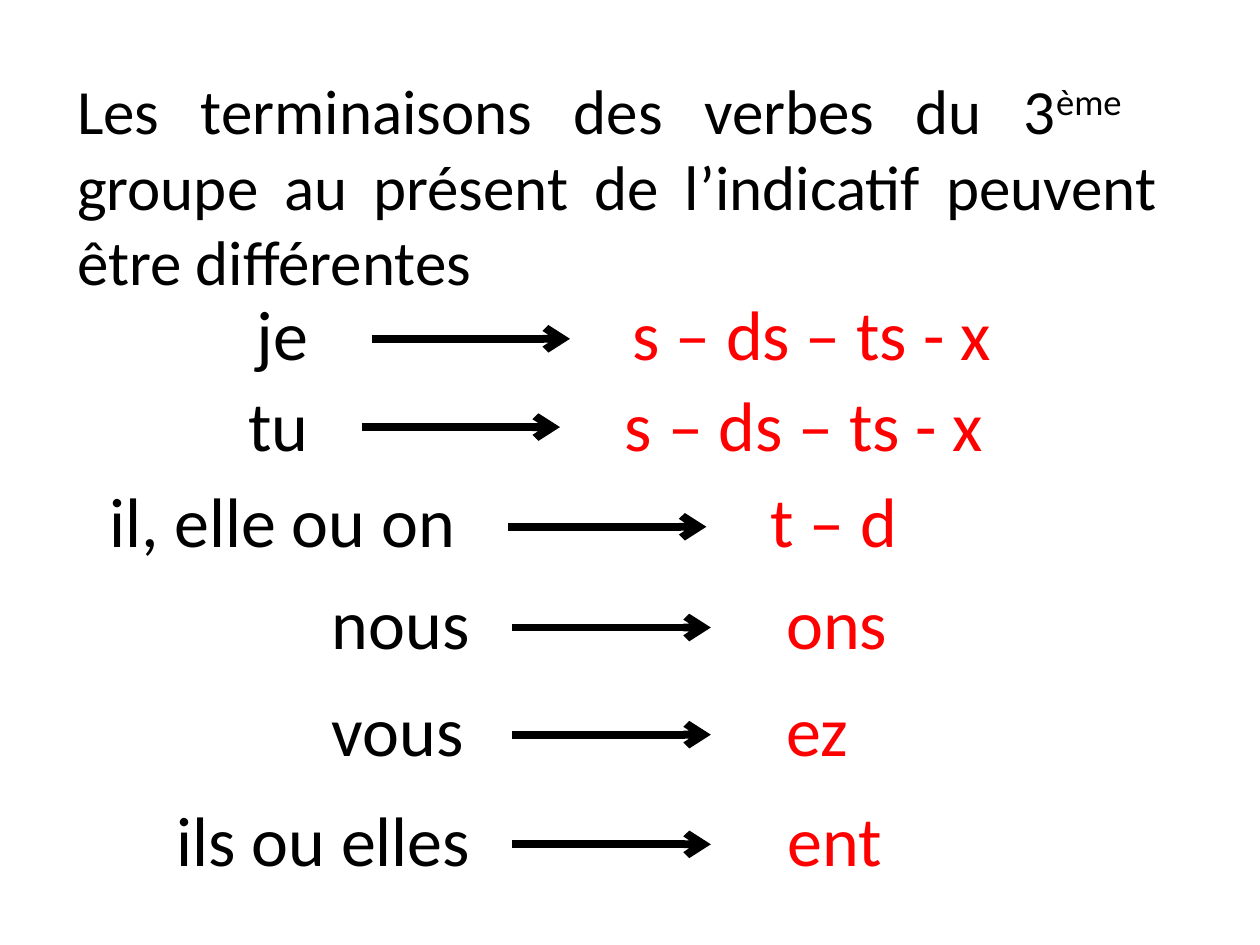
"""Build a slide on the endings of third-group French verbs in the present tense."""
from pptx import Presentation
from pptx import util as u
from pptx.dml.color import RGBColor
from pptx.enum import shapes, text
from pptx.oxml.ns import qn
from lxml import etree

FONT, BLACK, RED = "Calibri", "000000", "FF0000"
ROW_WIDTH, ROW_HEIGHT, ARROW_LENGTH = 19.41, 1.96, 4.0

RULE = [
    ("Les terminaisons des verbes du 3", None),
    ("ème  ", 30000),
    ("groupe au présent de l’indicatif peuvent être différentes", None),
]
# pronoun, ending, box left, box top, pronoun x, ending x, arrow x, arrow y
ROWS = [
    ("je", "s – ds – ts - x", 2.9, 5.73, 5.18, 12.75, 7.49, 6.83),
    ("tu", "s – ds – ts - x", 2.9, 7.57, 5.01, 12.6, 7.29, 8.61),
    ("il, elle ou on", "t – d", 0.64, 9.5, 2.2, 15.54, 10.24, 10.62),
    ("nous", "ons", 2.31, 11.56, 6.69, 15.85, 10.33, 12.65),
    ("vous", "ez", 2.31, 13.72, 6.69, 15.85, 10.33, 14.81),
    ("ils ou elles", "ent", 3.3, 15.93, 3.56, 15.88, 10.33, 17.02),
]


def colour(value):
    return RGBColor.from_string(value)


def add_span(para, words, size, value):
    span = para.add_run()
    span.text = words
    span.font.name, span.font.size = FONT, u.Pt(size)
    span.font.color.rgb = colour(value)
    return span


def add_rule(slide):
    body = slide.placeholders[1]
    body.left, body.top, body.width, body.height = map(u.Cm, (1.3, 1.32, 22.28, 4.39))
    body.text_frame.auto_size = text.MSO_AUTO_SIZE.NONE
    para = body.text_frame.paragraphs[0]
    properties = para._p.get_or_add_pPr()
    properties.set("marL", "0")
    properties.set("indent", "0")
    etree.SubElement(properties, qn("a:buNone"))
    para.alignment = text.PP_ALIGN.JUSTIFY
    para.space_before = u.Pt(0)
    for words, baseline in RULE:
        span = add_span(para, words, 36, BLACK)
        if baseline:
            span._r.get_or_add_rPr().set("baseline", str(baseline))


def add_row(slide, pronoun, ending, left, top, pronoun_x, ending_x):
    box = slide.shapes.add_textbox(*map(u.Cm, (left, top, ROW_WIDTH, ROW_HEIGHT)))
    box.text_frame.word_wrap = True
    box.text_frame.margin_left = u.Cm(pronoun_x - left)
    para = box.text_frame.paragraphs[0]
    tabs = etree.SubElement(para._p.get_or_add_pPr(), qn("a:tabLst"))
    etree.SubElement(tabs, qn("a:tab"), pos=str(u.Cm(ending_x - pronoun_x)), algn="l")
    add_span(para, pronoun + "\t", 40, BLACK)
    add_span(para, ending, 40, RED)


def add_arrow(slide, x, y):
    arrow = slide.shapes.add_connector(
        shapes.MSO_CONNECTOR.STRAIGHT, *map(u.Cm, (x, y, x + ARROW_LENGTH, y)))
    arrow.line.color.rgb = colour(BLACK)
    arrow.line.width = u.Pt(4.5)
    etree.SubElement(arrow.line._get_or_add_ln(), qn("a:tailEnd"), type="arrow")
    etree.SubElement(arrow._element.spPr, qn("a:effectLst"))


def main():
    deck = Presentation()
    deck.slide_width, deck.slide_height = u.Cm(25.4), u.Cm(19.05)
    slide = deck.slides.add_slide(deck.slide_layouts[1])
    title = slide.shapes.title._element
    title.getparent().remove(title)
    add_rule(slide)
    for *row, arrow_x, arrow_y in ROWS:
        add_row(slide, *row)
        add_arrow(slide, arrow_x, arrow_y)
    deck.save("out.pptx")


if __name__ == "__main__":
    main()
